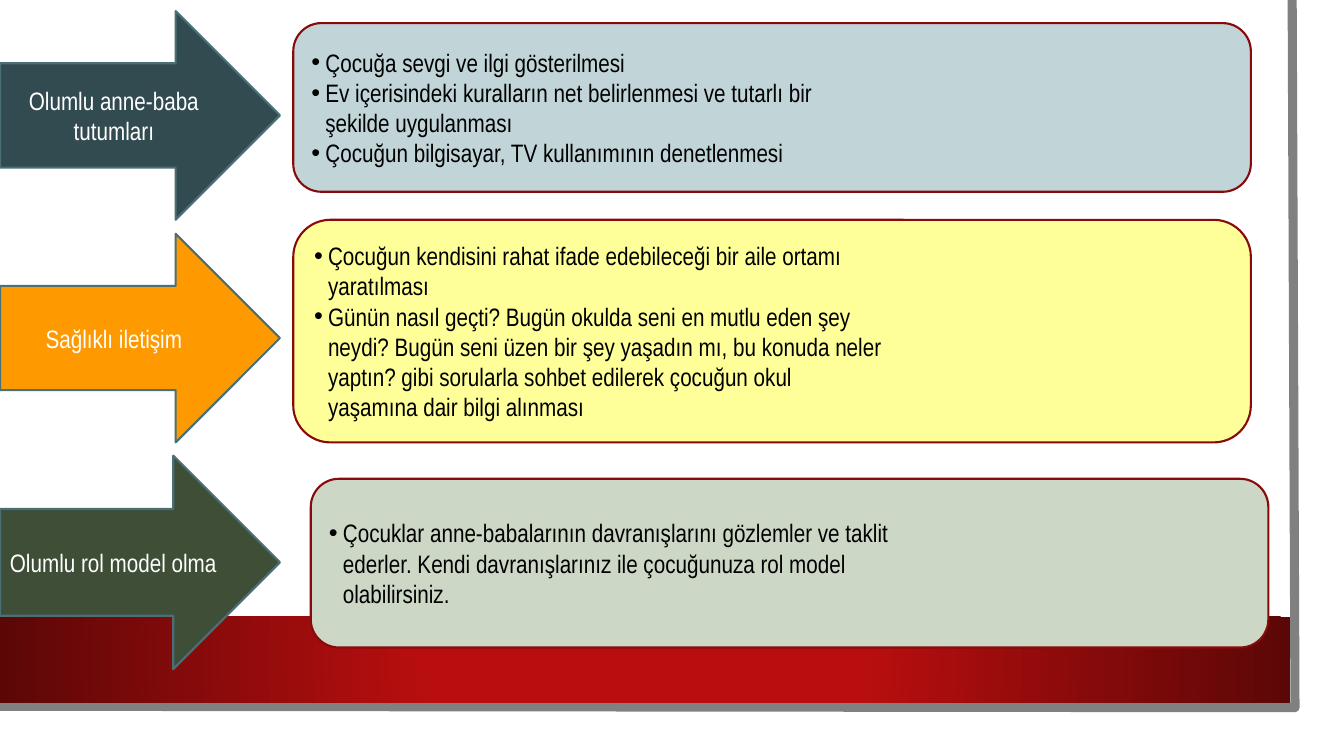
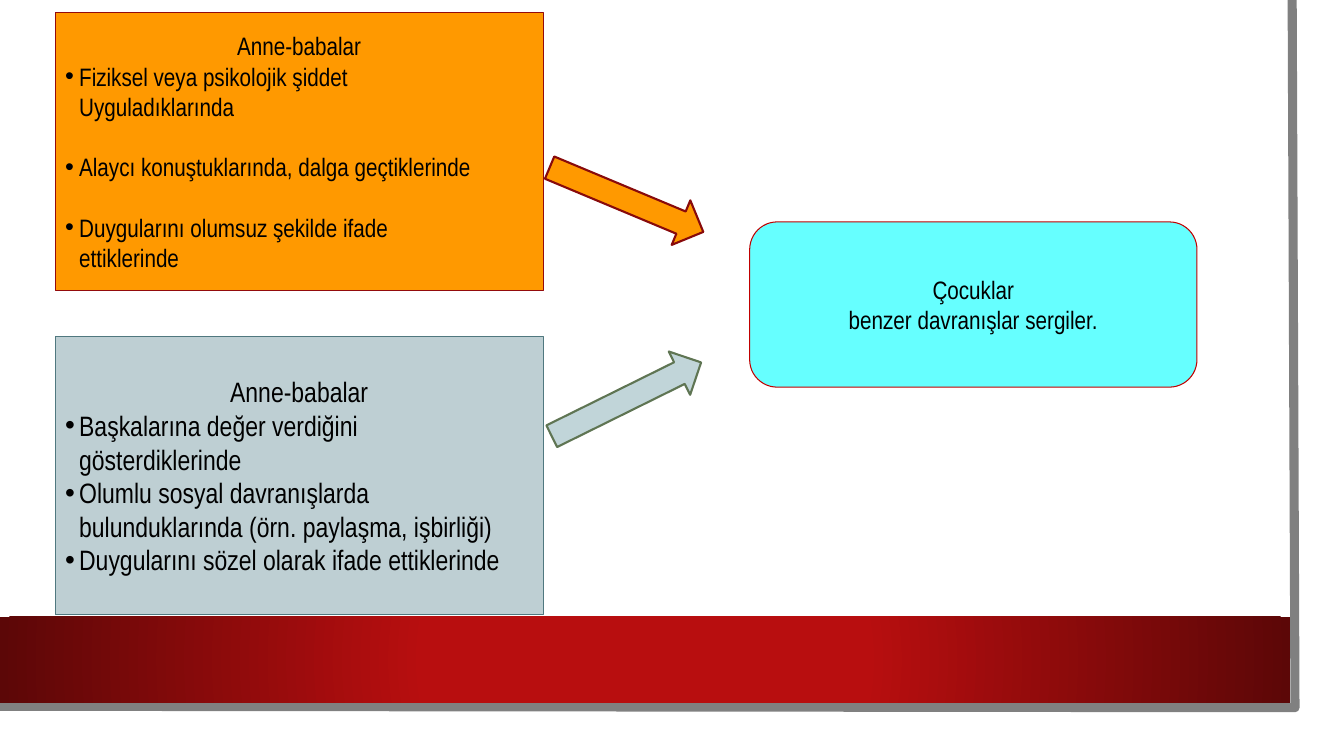
from dataclasses import dataclass

from lxml import etree
from pptx import Presentation
from pptx.dml.color import RGBColor
from pptx.enum.shapes import MSO_SHAPE
from pptx.enum.text import MSO_ANCHOR, PP_ALIGN
from pptx.oxml.ns import qn
from pptx.util import Pt

RECT = MSO_SHAPE.RECTANGLE
ROUNDED = MSO_SHAPE.ROUNDED_RECTANGLE
ARROW = MSO_SHAPE.RIGHT_ARROW
MIDDLE = MSO_ANCHOR.MIDDLE
LEFT, CENTER = PP_ALIGN.LEFT, PP_ALIGN.CENTER


@dataclass(frozen=True)
class Theme:
    font: str = "Arial Narrow"
    body: float = 18
    large: float = 20
    bullet_indent: float = 10
    blank_line: float = 21.5
    thin: float = 0.75
    medium: float = 1.5
    frame_width: float = 6.5
    black: str = "000000"
    white: str = "FFFFFF"
    frame: str = "808080"
    band: str = "B80E0F"
    band_edge: str = "5C0707"
    dark_red: str = "880A0B"
    box_red: str = "930B0C"
    result_red: str = "C00000"
    teal: str = "324B50"
    teal_line: str = "4A6F76"
    box_teal_line: str = "50787F"
    orange: str = "FF9900"
    olive: str = "3F4E37"
    olive_line: str = "5F7553"
    pale_blue: str = "C1D5D9"
    grey_blue: str = "BECFD3"
    yellow: str = "FFFF99"
    pale_green: str = "CCD7C6"
    cyan: str = "66FFFF"


T = Theme()


def rgb(value):
    return RGBColor.from_string(value)


def add_panel(s, kind, box, fill, line, width):
    sp = s.shapes.add_shape(kind, *map(Pt, box))
    sp.shadow.inherit = False
    sp.fill.solid()
    sp.fill.fore_color.rgb = rgb(fill)
    sp.line.color.rgb = rgb(line)
    sp.line.width = Pt(width)
    return sp


def add_bullet(p):
    pPr = p._p.get_or_add_pPr()
    indent = Pt(T.bullet_indent)
    pPr.set("marL", str(indent))
    pPr.set("indent", str(-indent))
    etree.SubElement(pPr, qn("a:buFont")).set("typeface", "Arial")
    etree.SubElement(pPr, qn("a:buChar")).set("char", "•")


def write(sp, headings=(), bullets=(), size=T.body, color=T.black, gap=0):
    """Centred headings, then bullets; gap parts each bullet from the one before."""
    tf = sp.text_frame
    tf.word_wrap = True
    tf.vertical_anchor = MIDDLE
    tf.text = "\n".join([*headings, *bullets])
    for i, p in enumerate(tf.paragraphs):
        bullet_no = i - len(headings)
        p.alignment = CENTER if bullet_no < 0 else LEFT
        if bullet_no >= 0:
            add_bullet(p)
        if bullet_no > 0 and gap:
            p.space_before = Pt(gap)
        for r in p.runs:
            r.font.name = T.font
            r.font.size = Pt(size)
            r.font.color.rgb = rgb(color)


def add_page_frame(s, layout):
    """Draw the grey edge and red band, then move them to the layout."""
    builder = s.shapes.build_freeform(Pt(923), 0)
    builder.add_line_segments([(Pt(925), Pt(505.5)), (Pt(-2), Pt(504.5))], close=False)
    edge = builder.convert_to_shape()
    edge.shadow.inherit = False
    edge.fill.background()
    edge.line.color.rgb = rgb(T.frame)
    edge.line.width = Pt(T.frame_width)

    band = s.shapes.add_shape(RECT, 0, Pt(440.5), Pt(921.5), Pt(61.5))
    band.shadow.inherit = False
    band.line.fill.background()
    band.fill.gradient()
    stops = ((0.34, T.band), (1, T.band_edge))
    for stop, (position, color) in zip(band.fill.gradient_stops, stops):
        stop.position = position
        stop.color.rgb = rgb(color)
    gradient = band.element.spPr.find(qn("a:gradFill"))
    radial = etree.Element(qn("a:path"), {"path": "circle"})
    etree.SubElement(radial, qn("a:fillToRect"), dict.fromkeys("ltrb", "50000"))
    gradient.replace(gradient.find(qn("a:lin")), radial)

    for placeholder in list(layout.placeholders):
        layout.shapes.element.remove(placeholder.element)
    for sp in (edge, band):
        layout.shapes.element.append(sp.element)


def add_advice_row(s, box, heading, arrow_fill, bullets, fill, panel):
    """Arrow fills box; panel gives the text panel's offset from it and its size."""
    arrow = add_panel(s, ARROW, box, arrow_fill, T.teal_line, T.medium)
    write(arrow, [heading], color=T.white)
    dx, dy, w, h = panel
    text_box = (box[0] + dx, box[1] + dy, w, h)
    sp = add_panel(s, ROUNDED, text_box, fill, T.dark_red, T.medium)
    write(sp, bullets=bullets)


def add_cause(s, box, bullets, colors, arrow_colors, arrow_dy, angle, size, gap=0):
    """Parents' box with a tilted arrow leaving its right side."""
    x, y, w, h = box
    sp = add_panel(s, RECT, box, *colors, T.thin)
    write(sp, ["Anne-babalar"], bullets, size, gap=gap)
    arrow_box = (x + w, y + arrow_dy, 119, 34.5)
    add_panel(s, ARROW, arrow_box, *arrow_colors, T.medium).rotation = angle


def build_advice(s):
    add_advice_row(
        s, (0, 8, 200, 149), "Olumlu anne-baba tutumları", T.teal,
        ["Çocuğa sevgi ve ilgi gösterilmesi",
         "Ev içerisindeki kuralların net belirlenmesi ve tutarlı bir\v"
         "şekilde uygulanması",
         "Çocuğun bilgisayar, TV kullanımının denetlenmesi"],
        T.pale_blue, (209.5, 8.5, 684, 120.5))
    add_advice_row(
        s, (0, 167, 200, 149), "Sağlıklı iletişim", T.orange,
        ["Çocuğun kendisini rahat ifade edebileceği bir aile ortamı\v"
         "yaratılması",
         "Günün nasıl geçti? Bugün okulda seni en mutlu eden şey\v"
         "neydi? Bugün seni üzen bir şey yaşadın mı, bu konuda neler\v"
         "yaptın? gibi sorularla sohbet edilerek çocuğun okul\v"
         "yaşamına dair bilgi alınması"],
        T.yellow, (209.5, -10, 684, 159))
    add_advice_row(
        s, (0, 325.5, 200, 152.5), "Olumlu rol model olma", T.olive,
        ["Çocuklar anne-babalarının davranışlarını gözlemler ve taklit\v"
         "ederler. Kendi davranışlarınız ile çocuğunuza rol model\v"
         "olabilirsiniz."],
        T.pale_green, (222, 16.5, 684, 120.5))


def build_modelling(s):
    add_cause(
        s, (39.5, 9, 348.5, 198.5),
        ["Fiziksel veya psikolojik şiddet\vUyguladıklarında",
         "Alaycı konuştuklarında, dalga geçtiklerinde",
         "Duygularını olumsuz şekilde ifade\vettiklerinde"],
        (T.orange, T.box_red), (T.orange, T.dark_red),
        116.5, 22.7, T.body, T.blank_line)
    add_cause(
        s, (39.5, 240.5, 348.5, 198.5),
        ["Başkalarına değer verdiğini\vgösterdiklerinde",
         "Olumlu sosyal davranışlarda\v"
         "bulunduklarında (örn. paylaşma, işbirliği)",
         "Duygularını sözel olarak ifade ettiklerinde"],
        (T.grey_blue, T.box_teal_line), (T.pale_blue, T.olive_line),
        27.5, 333.7, T.large)
    result = add_panel(s, ROUNDED, (535.5, 158.5, 319.5, 118),
                       T.cyan, T.result_red, T.thin)
    write(result, ["Çocuklar", "benzer davranışlar sergiler."])


def main():
    prs = Presentation()
    prs.slide_width, prs.slide_height = Pt(960), Pt(540)
    layout = prs.slide_layouts[6]
    advice, modelling = (prs.slides.add_slide(layout) for _ in range(2))
    add_page_frame(advice, layout)
    build_advice(advice)
    build_modelling(modelling)
    prs.save("out.pptx")


if __name__ == "__main__":
    main()
